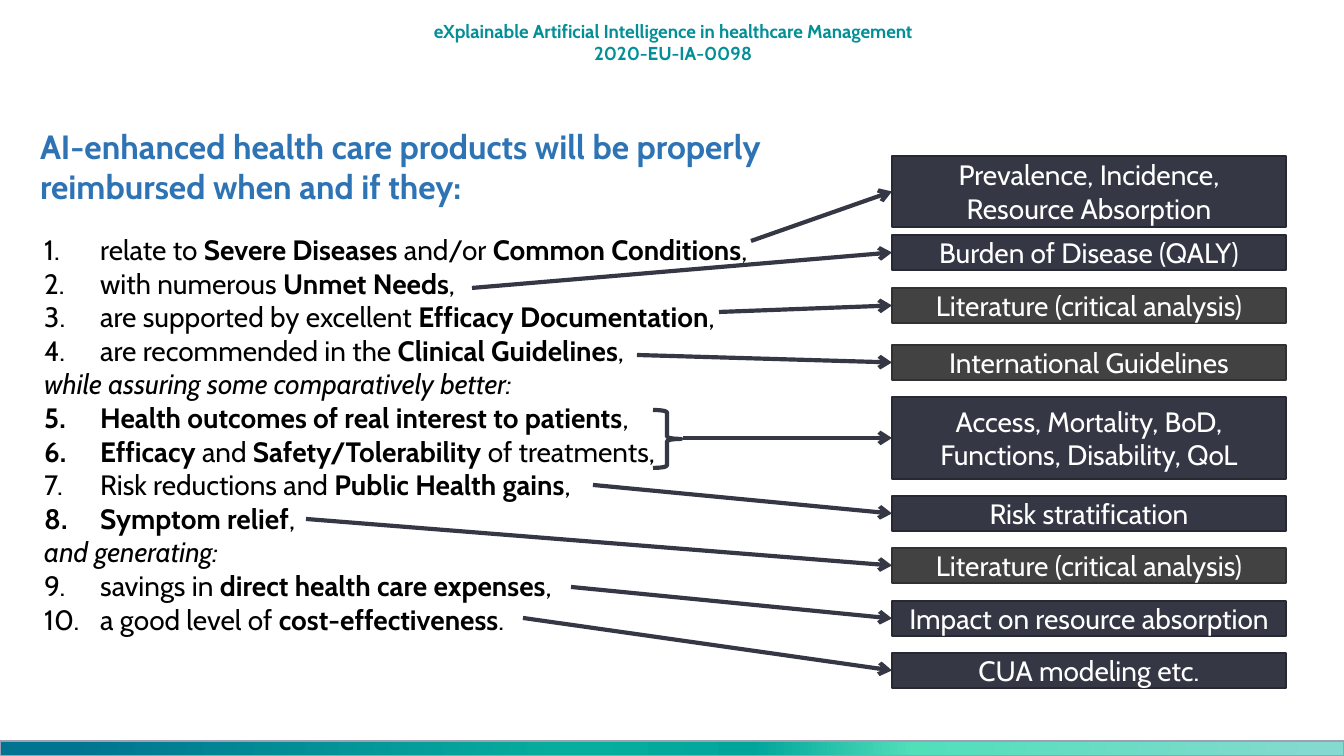
import lxml.etree
import pptx
import pptx.dml.color
import pptx.enum.shapes
import pptx.enum.text
import pptx.oxml.ns
import pptx.util

EMU_PER_PX = 914400 / 134.4
FONT = "Cabin"
BLACK, WHITE = "000000", "FFFFFF"
NAVY, NAVY_EDGE = "353744", "272932"
GRAY, GRAY_EDGE = "424242", "313131"
ALIGN = pptx.enum.text.PP_ALIGN
ANCHOR = pptx.enum.text.MSO_ANCHOR
SHAPE = pptx.enum.shapes.MSO_SHAPE

FOOTER_STOPS = [(5, "007490"), (43, "06AF9D"), (56, "00A59A"), (68, "51DFBA"), (99, "85DACF")]

CRITERIA = [
    (None, 1, [
        "relate to **Severe Diseases **and/or **Common Conditions**,",
        "with numerous **Unmet Needs**,",
        "are supported by excellent **Efficacy Documentation**,",
        "are recommended in the **Clinical Guidelines**,",
    ]),
    ("while assuring some comparatively better:", 5, [
        "**Health outcomes of real interest to patients**,",
        "**Efficacy** and **Safety/Tolerability **of treatments,",
        "Risk reductions and **Public Health gains**,",
        "**Symptom relief**,",
    ]),
    ("and generating:", 9, [
        "savings in **direct health care expenses**,",
        "a good level of **cost-effectiveness**.",
    ]),
]

MEASURES = [
    ("Prevalence, Incidence, Resource Absorption", 156, 71, NAVY, NAVY_EDGE, (751, 241)),
    ("Burden of Disease (QALY)", 235, 35, NAVY, NAVY_EDGE, (472, 288)),
    ("Literature (critical analysis)", 288, 35, GRAY, GRAY_EDGE, (719, 312)),
    ("International Guidelines", 345, 35, GRAY, GRAY_EDGE, (637, 355)),
    ("Access, Mortality, BoD, Functions, Disability, QoL", 397, 82, NAVY, NAVY_EDGE, (683, 438)),
    ("Risk stratification", 496, 35, NAVY, NAVY_EDGE, (593, 485)),
    ("Literature (critical analysis)", 548, 35, GRAY, GRAY_EDGE, (306, 519)),
    ("Impact on resource absorption", 601, 35, NAVY, NAVY_EDGE, (571, 587)),
    ("CUA modeling etc.", 653, 35, NAVY, NAVY_EDGE, (523, 618)),
]


def px(value):
    """Turn pixels into EMU."""
    return pptx.util.Emu(round(value * EMU_PER_PX))


def rgb(value):
    """Turn a hex string into a colour."""
    return pptx.dml.color.RGBColor.from_string(value)


def add_element(parent, tag, **attributes):
    """Append a DrawingML child element."""
    return lxml.etree.SubElement(parent, pptx.oxml.ns.qn(tag), attributes)


def format_run(run, size, color, bold=False, italic=False):
    """Set the font of one run."""
    run.font.name = FONT
    run.font.size = pptx.util.Pt(size)
    run.font.color.rgb = rgb(color)
    run.font.bold = bold
    run.font.italic = italic


def set_line(line, color, width):
    """Colour and size an outline."""
    line.color.rgb = rgb(color)
    line.width = pptx.util.Pt(width)


def add_text_box(slide, left, top, width, height):
    """Add an empty wrapping text box and return its frame."""
    text_frame = slide.shapes.add_textbox(px(left), px(top), px(width), px(height)).text_frame
    text_frame.word_wrap = True
    return text_frame


def add_shape(slide, kind, left, top, width, height):
    """Add a preset shape without shadow."""
    shape = slide.shapes.add_shape(kind, px(left), px(top), px(width), px(height))
    shape.shadow.inherit = False
    return shape


def add_header(slide):
    """Add the centred project name."""
    text_frame = add_text_box(slide, 417, 13, 512, 59)
    text_frame.text = "eXplainable Artificial Intelligence in healthcare Management 2020-EU-IA-0098"
    paragraph = text_frame.paragraphs[0]
    paragraph.alignment = ALIGN.CENTER
    format_run(paragraph.runs[0], 10, "038F96", bold=True)


def add_footer(slide):
    """Add the gradient band along the bottom."""
    band = add_shape(slide, SHAPE.RECTANGLE, 0, 741, 1344, 15)
    band.fill.gradient()
    band.fill.gradient_angle = 0
    stops = band._element.spPr.find(".//" + pptx.oxml.ns.qn("a:gsLst"))
    for stop in list(stops):
        stops.remove(stop)
    for position, color in FOOTER_STOPS:
        stop = add_element(stops, "a:gs", pos=str(position * 1000))
        add_element(stop, "a:srgbClr", val=color)
    set_line(band.line, "9DA0B2", 0.75)


def add_title(slide):
    """Add the slide title."""
    text_frame = add_text_box(slide, 31, 125, 778, 82)
    text_frame.vertical_anchor = ANCHOR.MIDDLE
    text_frame.margin_left = text_frame.margin_right = px(9)
    text_frame.margin_top = text_frame.margin_bottom = px(5)
    text_frame.text = "AI-enhanced health care products will be properly reimbursed when and if they:"
    format_run(text_frame.paragraphs[0].runs[0], 18, "2E74B5", bold=True)


def number_paragraph(paragraph, start):
    """Give a paragraph a hanging automatic number."""
    properties = paragraph._p.get_or_add_pPr()
    properties.set("marL", str(px(56)))
    properties.set("indent", str(-px(56)))
    add_element(add_element(properties, "a:buClr"), "a:srgbClr", val=BLACK)
    add_element(properties, "a:buAutoNum", type="arabicPeriod", startAt=str(start))


def add_criteria(slide):
    """Add the numbered criteria with their italic lead-ins."""
    text_frame = add_text_box(slide, 31, 226, 833, 421)
    paragraph = text_frame.paragraphs[0]
    for lead_in, start, items in CRITERIA:
        if lead_in:
            paragraph = text_frame.add_paragraph()
            paragraph.text = lead_in
            format_run(paragraph.runs[0], 15, BLACK, italic=True)
        for item in items:
            if paragraph.runs:
                paragraph = text_frame.add_paragraph()
            number_paragraph(paragraph, start)
            for index, part in enumerate(item.split("**")):
                if part:
                    run = paragraph.add_run()
                    run.text = part
                    format_run(run, 15, BLACK, bold=index % 2 == 1)


def add_measure(slide, text, top, height, fill, edge):
    """Add one labelled measure box."""
    box = add_shape(slide, SHAPE.RECTANGLE, 892, top, 394, height)
    box.fill.solid()
    box.fill.fore_color.rgb = rgb(fill)
    set_line(box.line, edge, 1)
    text_frame = box.text_frame
    text_frame.word_wrap = True
    text_frame.vertical_anchor = ANCHOR.MIDDLE
    text_frame.text = text
    text_frame.paragraphs[0].alignment = ALIGN.CENTER
    format_run(text_frame.paragraphs[0].runs[0], 15, WHITE)
    return box


def add_arrow(slide, start, box):
    """Draw an arrow from a point to the left side of a box."""
    left, top = map(px, start)
    kind = pptx.enum.shapes.MSO_CONNECTOR.STRAIGHT
    arrow = slide.shapes.add_connector(kind, left, top, box.left, box.top + box.height // 2)
    arrow.end_connect(box, 1)
    set_line(arrow.line, NAVY, 2.25)
    add_element(arrow.line._get_or_add_ln(), "a:tailEnd", type="arrow")
    add_element(arrow._element.spPr, "a:effectLst")


def add_brace(slide):
    """Add the brace that groups two criteria."""
    brace = add_shape(slide, SHAPE.RIGHT_BRACE, 653, 410, 28, 58)
    brace.fill.background()
    set_line(brace.line, NAVY, 2.25)


def main():
    """Build and save the slide."""
    presentation = pptx.Presentation()
    presentation.slide_width, presentation.slide_height = px(1344), px(756)
    slide = presentation.slides.add_slide(presentation.slide_layouts[6])
    add_header(slide)
    add_footer(slide)
    add_criteria(slide)
    add_title(slide)
    for text, top, height, fill, edge, start in MEASURES:
        add_arrow(slide, start, add_measure(slide, text, top, height, fill, edge))
    add_brace(slide)
    presentation.save("out.pptx")


if __name__ == "__main__":
    main()
